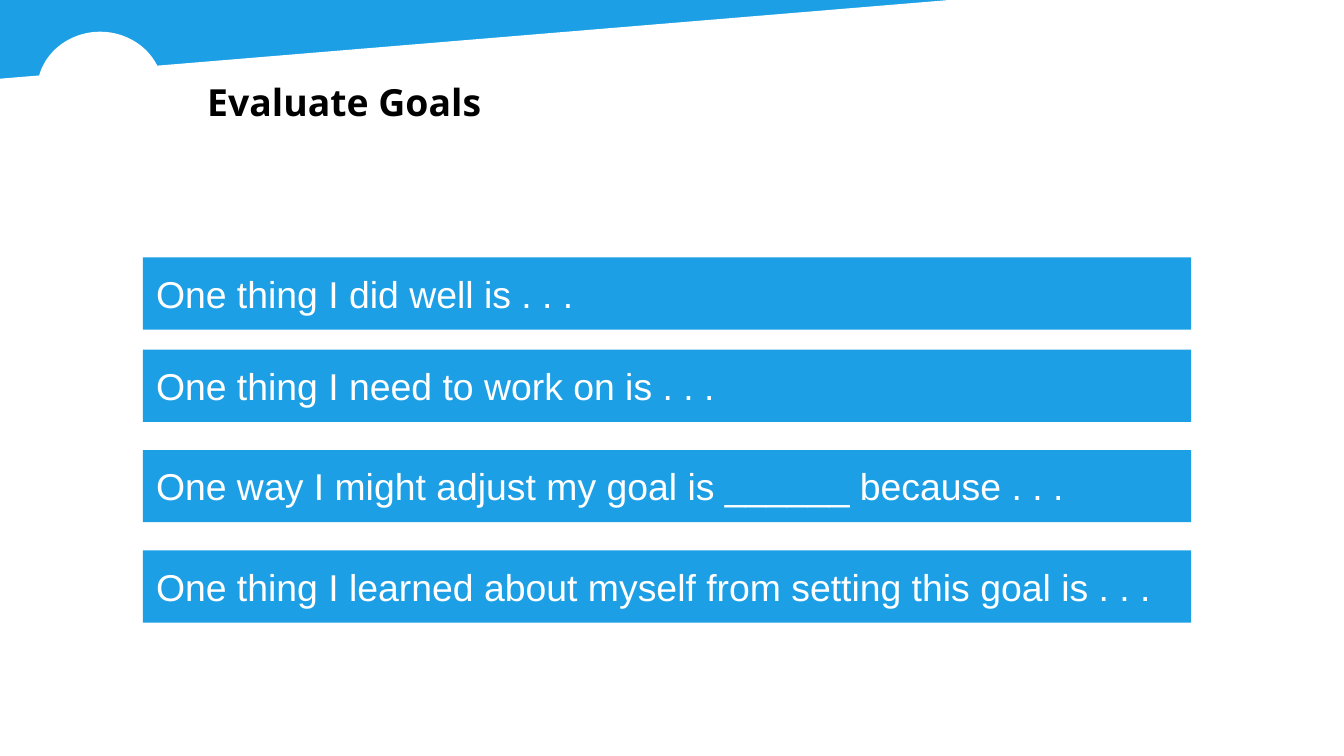
from pptx import Presentation
from pptx.dml.color import RGBColor
from pptx.enum.shapes import MSO_SHAPE as Shape
from pptx.enum.text import MSO_ANCHOR as Anchor, MSO_AUTO_SIZE as AutoSize, PP_ALIGN as Align
from pptx.util import Inches, Pt

WIDTH = Inches(10)
HEIGHT = WIDTH * 9 // 16
BLUE, WHITE, BLACK = "1D9FE6", "FFFFFF", "000000"
PROMPTS = (
    "One thing I did well is . . .",
    "One thing I need to work on is . . .",
    "One way I might adjust my goal is ______ because . . .",
    "One thing I learned about myself from setting this goal is . . .",
)
STACK_ROWS, BAR_ROWS, BAR_TOPS = 91, 18, (0, 23, 48, 73)


def color(hex_code):
    """Turn a hex string into a colour."""
    return RGBColor.from_string(hex_code)


def area(box, left, top, width, height):
    """Return the part of a box that the given percentages describe."""
    box_left, box_top, box_width, box_height = box
    return (box_left + round(left * box_width / 100), box_top + round(top * box_height / 100),
            round(width * box_width / 100), round(height * box_height / 100))


def paint(shape, fill):
    """Give a shape a plain fill without outline or shadow."""
    shape.shadow.inherit = False
    shape.fill.solid()
    shape.fill.fore_color.rgb = color(fill)
    shape.line.fill.background()


def write(shape, text, font_name, ink, bold=False):
    """Write one left-aligned line of text into a shape."""
    frame = shape.text_frame
    frame.word_wrap = True
    frame.auto_size = AutoSize.SHAPE_TO_FIT_TEXT
    frame.vertical_anchor = Anchor.TOP
    frame.margin_left = frame.margin_right = Inches(0.1)
    frame.margin_top = frame.margin_bottom = Inches(0.1)
    paragraph = frame.paragraphs[0]
    paragraph.text = text
    paragraph.alignment = Align.LEFT
    font = paragraph.font
    font.name, font.size, font.bold = font_name, Pt(20), bold
    font.color.rgb = color(ink)
    return paragraph


def add_backdrop(slide, box):
    """Cover the blue background with a slanted white panel and a disc."""
    slide.background.fill.solid()
    slide.background.fill.fore_color.rgb = color(BLUE)
    corners = [area(box, x, y, 0, 0)[:2] for x, y in
               ((100.1, -4.09), (0, 10.67), (-0.1, 100.8), (100.3, 100.98))]
    outline = slide.shapes.build_freeform(*corners[0])
    outline.add_line_segments(corners[1:], close=True)
    panel = outline.convert_to_shape()
    paint(panel, WHITE)
    panel.line.color.rgb = color(WHITE)
    panel.line.width = Pt(2)
    disc = slide.shapes.add_shape(Shape.OVAL, *area(box, 2.75, 4.2, 9.4, 15.64))
    paint(disc, WHITE)


def add_title(slide, box):
    """Place the heading in its box."""
    heading = write(slide.shapes.add_textbox(*box), "Evaluate Goals", "Open Sans", BLACK, True)
    heading.line_spacing = 1.15


def add_prompts(slide, box):
    """Stack the prompt bars on the rows of the box."""
    left, top, width, height = box
    row = height / STACK_ROWS
    for prompt, bar_top in zip(PROMPTS, BAR_TOPS):
        bar = slide.shapes.add_shape(
            Shape.RECTANGLE, left, top + round(bar_top * row), width, round(BAR_ROWS * row))
        paint(bar, BLUE)
        write(bar, prompt, "Arial", WHITE)


def main():
    """Build and save the slide."""
    deck = Presentation()
    deck.slide_width, deck.slide_height = WIDTH, HEIGHT
    slide = deck.slides.add_slide(deck.slide_layouts[6])
    page = (0, 0, WIDTH, HEIGHT)
    add_backdrop(slide, page)
    add_title(slide, area(page, 14.43, 7.82, 23, 9.6))
    add_prompts(slide, area(page, 10.63, 34.05, 78, 48.3))
    deck.save("out.pptx")


if __name__ == "__main__":
    main()
